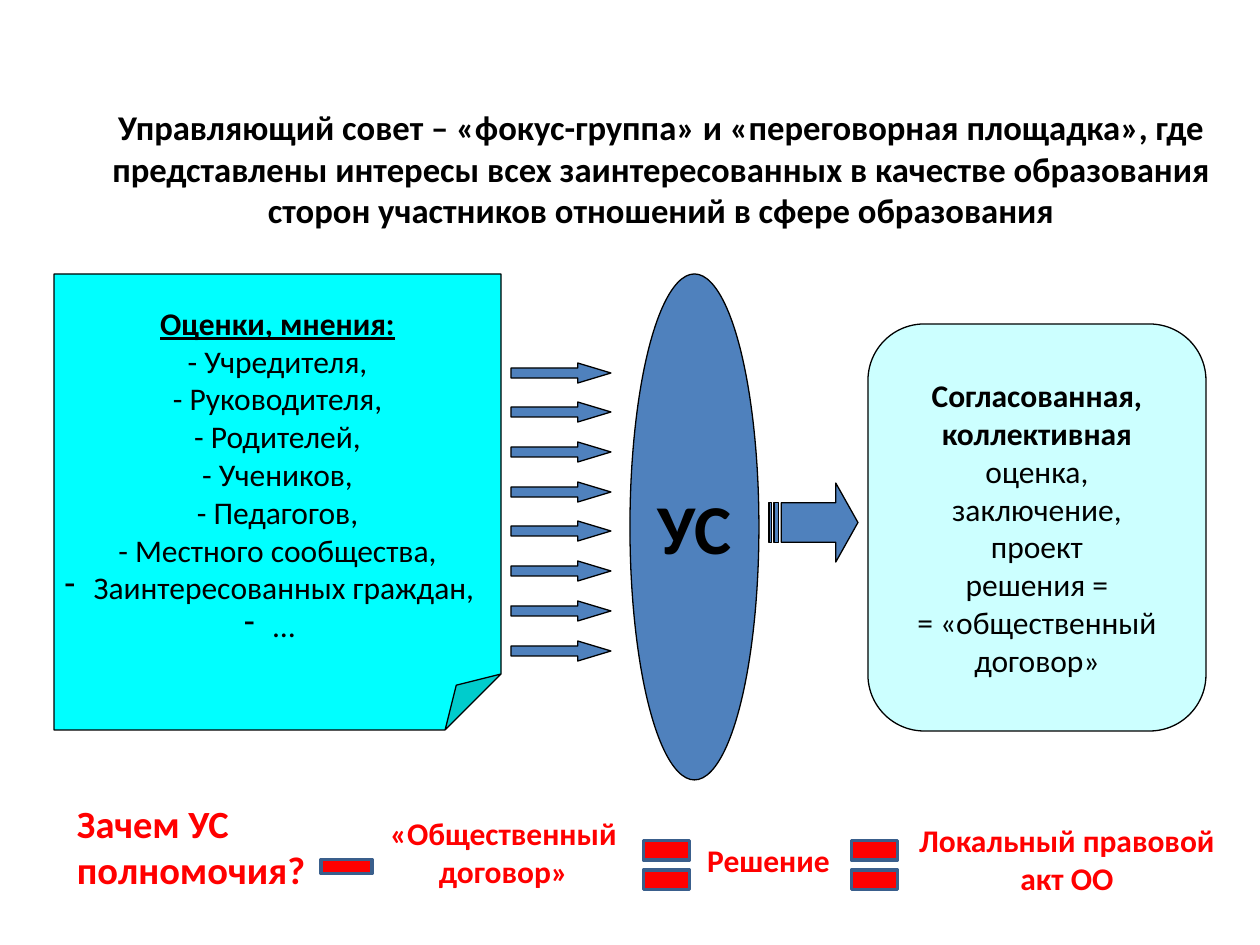
from pptx import Presentation
from pptx.dml.color import RGBColor
from pptx.enum.shapes import MSO_SHAPE
from pptx.enum.text import MSO_ANCHOR, MSO_AUTO_SIZE, PP_ALIGN
from pptx.oxml.ns import qn
from pptx.util import Emu, Pt
from lxml import etree

PX = 914400 / 126
BLACK, RED, BLUE = "000000", "FF0000", "4F81BD"


def px(n):
    return Emu(round(n * PX))


def rgb(value):
    return RGBColor.from_string(value)


def write(p, text, size=18, color=BLACK, bold=False, underline=False,
          align=PP_ALIGN.CENTER):
    """Fill a paragraph; a vertical tab in the text is a line break."""
    p.text = text
    p.alignment = align
    for r in p.runs:
        f = r.font
        f.name, f.size, f.bold, f.underline = "Calibri", Pt(size), bold, underline
        f.color.rgb = rgb(color)


def dash(p, indent=29, right=16):
    """Give a paragraph a hanging dash bullet."""
    pPr = p._p.get_or_add_pPr()
    pPr.set("marL", str(px(indent)))
    pPr.set("indent", str(-px(indent)))
    pPr.set("marR", str(px(right)))
    etree.SubElement(pPr, qn("a:buFontTx"))
    etree.SubElement(pPr, qn("a:buChar")).set("char", "-")


def fold(sp, share):
    """Set the corner size, which python-pptx does not list for this shape."""
    geom = sp._element.spPr.find(qn("a:prstGeom"))
    geom.set("prst", "foldedCorner")
    gd = etree.SubElement(geom.find(qn("a:avLst")), qn("a:gd"))
    gd.set("name", "adj")
    gd.set("fmla", f"val {round(share * 100000)}")


class Deck:
    def __init__(self, width, height):
        self.prs = Presentation()
        self.prs.slide_width, self.prs.slide_height = px(width), px(height)
        self.s = self.prs.slides.add_slide(self.prs.slide_layouts[6])

    def fill_text(self, sp, lines, wrap, anchor, margins, **fmt):
        """Write lines, each a string or a (string, format) pair."""
        tf = sp.text_frame
        tf.word_wrap, tf.vertical_anchor = wrap, anchor
        tf.margin_left = tf.margin_right = px(margins[0])
        tf.margin_top = tf.margin_bottom = px(margins[1])
        for i, line in enumerate(lines):
            text, own = (line, {}) if isinstance(line, str) else line
            p = tf.add_paragraph() if i else tf.paragraphs[0]
            write(p, text, **{**fmt, **own})
        return tf

    def shape(self, kind, x, y, w, h, fill=BLUE, line=BLACK, weight=0.75,
              adj=(), lines=(), **fmt):
        sp = self.s.shapes.add_shape(kind, px(x), px(y), px(w), px(h))
        sp.shadow.inherit = False
        sp.fill.solid()
        sp.fill.fore_color.rgb = rgb(fill)
        sp.line.color.rgb = rgb(line)
        sp.line.width = Pt(weight)
        for i, value in enumerate(adj):
            sp.adjustments[i] = value
        if lines:
            self.fill_text(sp, lines, False, MSO_ANCHOR.MIDDLE, (13, 6), **fmt)
        return sp

    def sign(self, kind, x, y, w, h):
        return self.shape(kind, x, y, w, h, fill=RED, line="3A5F8C", weight=2)

    def text(self, x, y, w, h, lines, wrap=True, anchor=MSO_ANCHOR.TOP,
             margins=(8, 4), grow=True, **fmt):
        sp = self.s.shapes.add_textbox(px(x), px(y), px(w), px(h))
        tf = self.fill_text(sp, lines, wrap, anchor, margins, **fmt)
        if grow:
            tf.auto_size = MSO_AUTO_SIZE.SHAPE_TO_FIT_TEXT
        return sp


def main():
    d = Deck(1260, 945)

    # Title
    d.text(94, 90, 1134, 157,
           ["Управляющий совет – «фокус-группа» и «переговорная площадка», где "
            "представлены интересы всех заинтересованных в качестве образования "
            "сторон участников отношений в сфере образования"],
           anchor=MSO_ANCHOR.MIDDLE, margins=(13, 6), grow=False,
           size=19.8, bold=True)

    # Opinions going in
    opinions = d.shape(
        MSO_SHAPE.FOLDED_CORNER, 54, 274, 447, 456, fill="00FFFF",
        lines=[("Оценки, мнения:", dict(bold=True, underline=True)),
               "- Учредителя,", "- Руководителя,", "- Родителей,",
               "- Учеников,", "- Педагогов,", "- Местного сообщества,",
               "Заинтересованных граждан,", "…"])
    fold(opinions, 0.125)
    for p in opinions.text_frame.paragraphs[-2:]:
        dash(p)

    # Council, with the arrows into and out of it
    d.shape(MSO_SHAPE.OVAL, 630, 274, 129, 506,
            lines=["УС"], size=40, bold=True)
    for i in range(8):
        d.shape(MSO_SHAPE.RIGHT_ARROW, 511, 363 + i * 278 // 7, 100, 20,
                adj=[0.5, 1.66])
    d.shape(MSO_SHAPE.STRIPED_RIGHT_ARROW, 769, 483, 89, 79, adj=[0.5, 0.28])

    # Agreed result
    strong = dict(bold=True)
    d.shape(MSO_SHAPE.FLOWCHART_ALTERNATE_PROCESS, 868, 324, 338, 407,
            fill="CCFFFF",
            lines=[("Согласованная,", strong), ("коллективная", strong),
                   "оценка,", "заключение,", "проект", "решения =",
                   "= «общественный", "договор»"])

    # Bottom equation
    red = dict(color=RED, bold=True)
    d.text(69, 796, 246, 101, ["Зачем УС", "полномочия?"], wrap=False,
           size=22, align=PP_ALIGN.LEFT, **red)
    d.sign(MSO_SHAPE.MATH_MINUS, 312, 837, 69, 59)
    d.text(377, 810, 253, 83, ["«Общественный\vдоговор»"], **red)
    d.text(699, 837, 139, 45, ["Решение"], **red)
    d.text(903, 817, 328, 83, ["Локальный правовой акт ОО"], **red)
    for x in (635, 843):
        d.sign(MSO_SHAPE.MATH_EQUAL, x, 823, 63, 84)

    d.prs.save("out.pptx")


if __name__ == "__main__":
    main()
